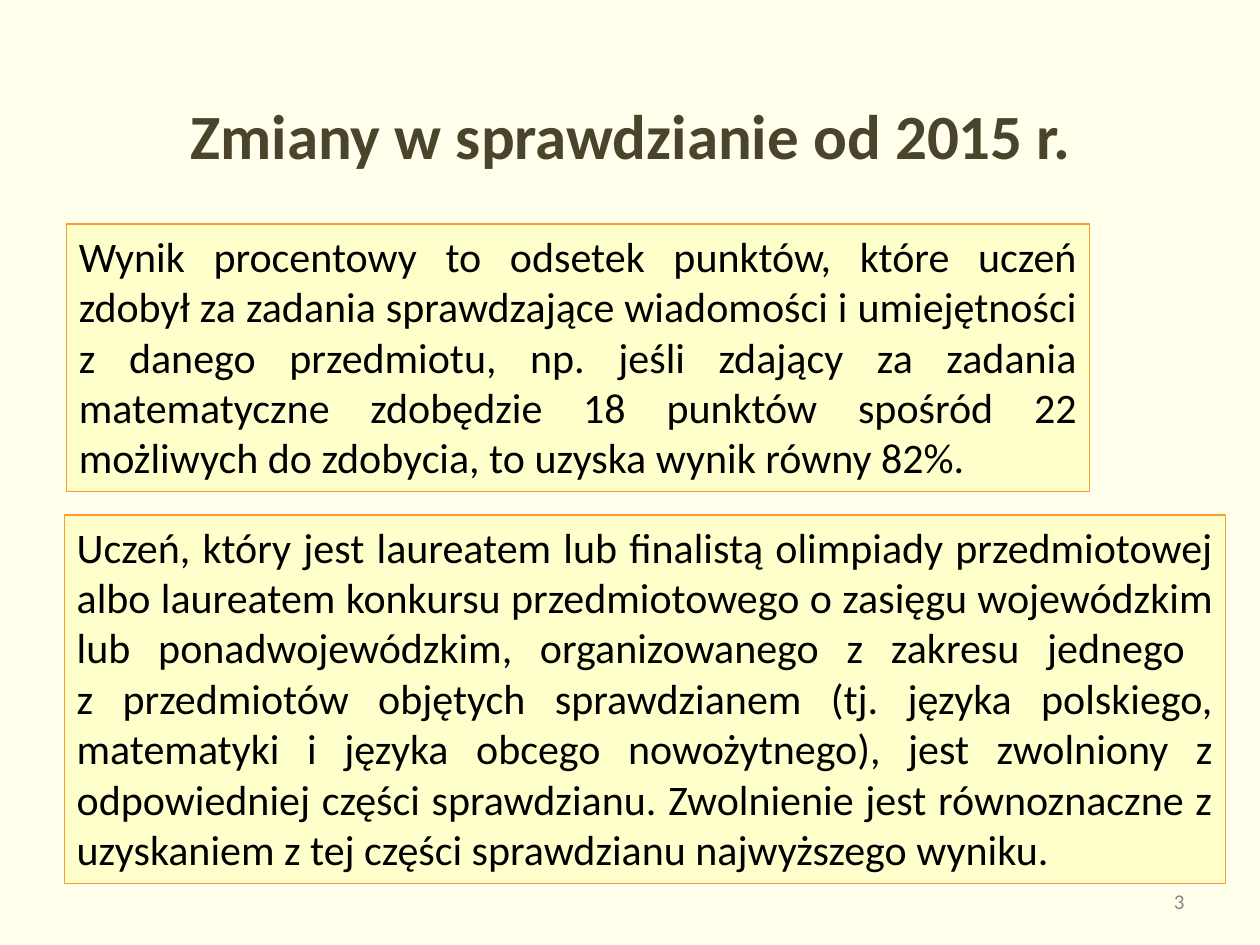
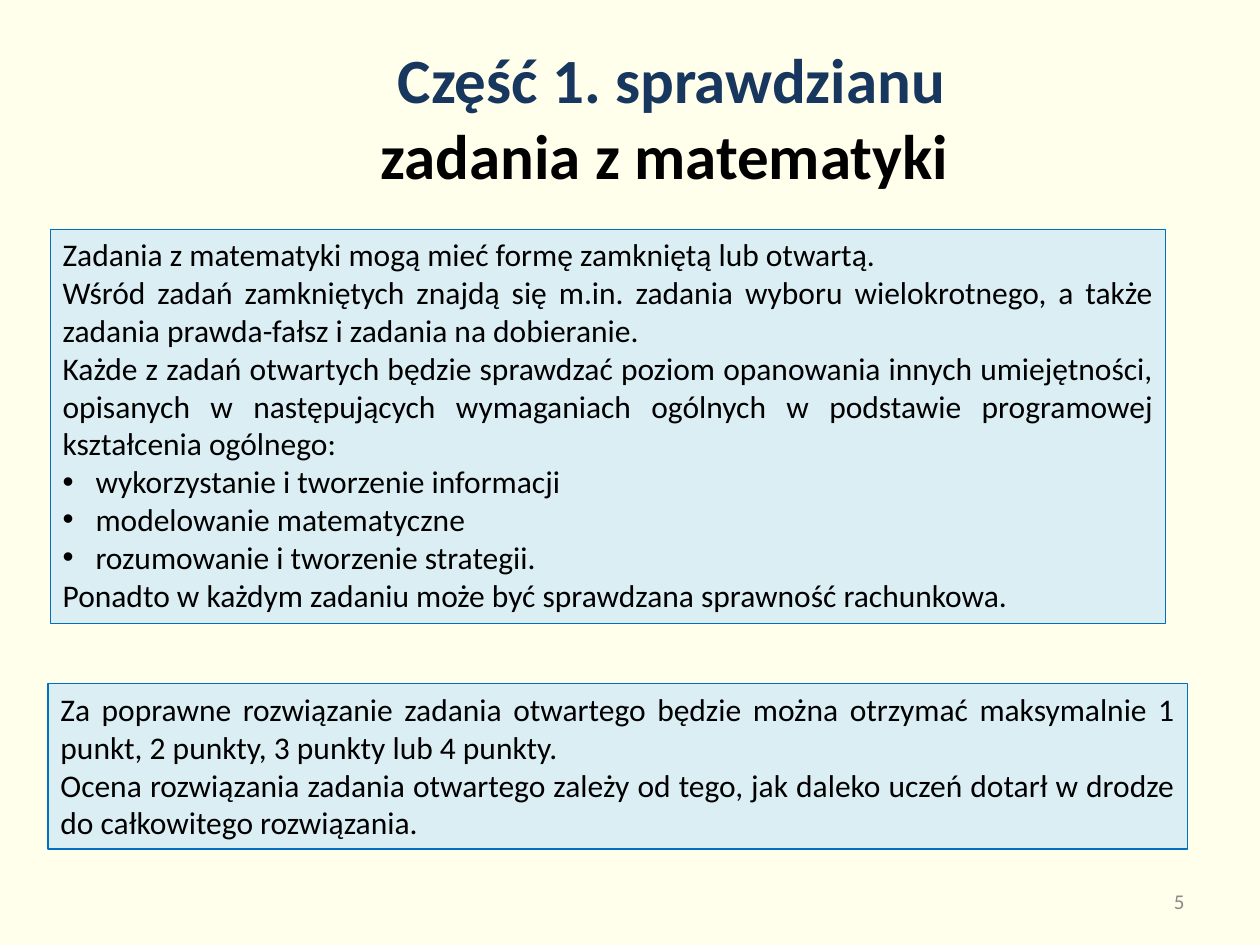
"""Build two slides about the changes to the school test."""
from lxml import etree
from pptx import Presentation
from pptx.dml.color import RGBColor
from pptx.enum.shapes import MSO_SHAPE
from pptx.enum.text import MSO_ANCHOR, MSO_AUTO_SIZE, PP_ALIGN
from pptx.oxml.ns import qn
from pptx.util import Pt

RECTANGLE = MSO_SHAPE.RECTANGLE
MIDDLE, TOP = MSO_ANCHOR.MIDDLE, MSO_ANCHOR.TOP
FIT_SHAPE = MSO_AUTO_SIZE.SHAPE_TO_FIT_TEXT
CENTER, JUSTIFY, RIGHT = PP_ALIGN.CENTER, PP_ALIGN.JUSTIFY, PP_ALIGN.RIGHT

FONT = "Calibri"
BACKGROUND, BLACK, GREY = "FFFFEB", "000000", "898989"
OLIVE, NAVY = "4A452A", "17375E"
YELLOW_BOX = ("FFFFCC", "FF9933")
BLUE_BOX = ("DBEEF4", "0070C0")
BULLET = "• "
BULLET_INDENT = 18.8

PERCENT_RESULT = [
    "Wynik procentowy to odsetek punktów, które uczeń zdobył za zadania sprawdzające "
    "wiadomości i umiejętności z danego przedmiotu, np. jeśli zdający za zadania "
    "matematyczne zdobędzie 18 punktów spośród 22 możliwych do zdobycia, to uzyska "
    "wynik równy 82%."
]
EXEMPTION = [
    "Uczeń, który jest laureatem lub finalistą olimpiady przedmiotowej albo laureatem "
    "konkursu przedmiotowego o zasięgu wojewódzkim lub ponadwojewódzkim, organizowanego "
    "z zakresu jednego \vz przedmiotów objętych sprawdzianem (tj. języka polskiego, "
    "matematyki i języka obcego nowożytnego), jest zwolniony z odpowiedniej części "
    "sprawdzianu. Zwolnienie jest równoznaczne z uzyskaniem z tej części sprawdzianu "
    "najwyższego wyniku."
]
TASK_FORMS = [
    "Zadania z matematyki mogą mieć formę zamkniętą lub otwartą.",
    "Wśród zadań zamkniętych znajdą się m.in. zadania wyboru wielokrotnego, a także "
    "zadania prawda-fałsz i zadania na dobieranie.",
    "Każde z zadań otwartych będzie sprawdzać poziom opanowania innych umiejętności, "
    "opisanych w następujących wymaganiach ogólnych w podstawie programowej "
    "kształcenia ogólnego:",
    "• wykorzystanie i tworzenie informacji",
    "• modelowanie matematyczne",
    "• rozumowanie i tworzenie strategii.",
    "Ponadto w każdym zadaniu może być sprawdzana sprawność rachunkowa.",
]
SCORING = [
    "Za poprawne rozwiązanie zadania otwartego będzie można otrzymać maksymalnie "
    "1 punkt, 2 punkty, 3 punkty lub 4 punkty.",
    "Ocena rozwiązania zadania otwartego zależy od tego, jak daleko uczeń dotarł "
    "w drodze do całkowitego rozwiązania.",
]


def color(hex_value):
    """Turn a hex string into a colour."""
    return RGBColor.from_string(hex_value)


def set_font(font, size, hex_value, bold=False):
    """Apply the shared typeface with a size, colour and weight."""
    font.name, font.size, font.bold = FONT, Pt(size), bold
    font.color.rgb = color(hex_value)


def add_bullet(paragraph):
    """Give a paragraph a round bullet with a hanging indent."""
    properties = paragraph._p.get_or_add_pPr()
    properties.set("marL", str(Pt(BULLET_INDENT)))
    properties.set("indent", str(-Pt(BULLET_INDENT)))
    etree.SubElement(properties, qn("a:buFont")).set("typeface", "Arial")
    etree.SubElement(properties, qn("a:buChar")).set("char", BULLET.strip())


def add_title(slide, lines, left, top, width):
    """Place the title and fill it with coloured lines."""
    title = slide.shapes.title
    title.left, title.top, title.width, title.height = map(Pt, (left, top, width, 90))
    title.text_frame.vertical_anchor = MIDDLE
    paragraph = title.text_frame.paragraphs[0]
    paragraph.alignment = CENTER
    for index, (text, hex_value) in enumerate(lines):
        if index:
            paragraph.add_line_break()
        run = paragraph.add_run()
        run.text = text
        set_font(run.font, 36, hex_value, bold=True)


def add_text_panel(slide, texts, bounds, colors, size):
    """Add a framed rectangle of justified paragraphs."""
    panel = slide.shapes.add_shape(RECTANGLE, *map(Pt, bounds))
    panel.shadow.inherit = False
    fill, line = colors
    panel.fill.solid()
    panel.fill.fore_color.rgb = color(fill)
    panel.line.color.rgb = color(line)
    panel.line.width = Pt(0.75)
    frame = panel.text_frame
    frame.word_wrap = True
    frame.auto_size = FIT_SHAPE
    frame.vertical_anchor = TOP
    for index, text in enumerate(texts):
        paragraph = frame.add_paragraph() if index else frame.paragraphs[0]
        paragraph.text = text.removeprefix(BULLET)
        paragraph.alignment = JUSTIFY
        if text.startswith(BULLET):
            add_bullet(paragraph)
        set_font(paragraph.font, size, BLACK)


def add_page_number(slide, number):
    """Add the page number at the bottom right."""
    box = slide.shapes.add_textbox(Pt(516), Pt(500.5), Pt(168), Pt(28.75))
    frame = box.text_frame
    frame.word_wrap = True
    frame.vertical_anchor = MIDDLE
    paragraph = frame.paragraphs[0]
    paragraph.text = str(number)
    paragraph.alignment = RIGHT
    set_font(paragraph.font, 12, GREY)


def add_page(presentation, number):
    """Add a title-only slide with the shared background and page number."""
    slide = presentation.slides.add_slide(presentation.slide_layouts[5])
    slide.background.fill.solid()
    slide.background.fill.fore_color.rgb = color(BACKGROUND)
    add_page_number(slide, number)
    return slide


def main():
    """Build and save the presentation."""
    presentation = Presentation()
    presentation.slide_width, presentation.slide_height = Pt(720), Pt(540)

    changes = add_page(presentation, 3)
    add_title(changes, [("Zmiany w sprawdzianie od 2015 r.", OLIVE)], 36.5, 31.5, 648)
    add_text_panel(changes, PERCENT_RESULT, (38, 128, 584.5, 152.75), YELLOW_BOX, 24)
    add_text_panel(changes, EXEMPTION, (36.75, 294.25, 663.5, 210.75), YELLOW_BOX, 24)

    mathematics = add_page(presentation, 5)
    title_lines = [("Część 1. sprawdzianu", NAVY), ("zadania z matematyki ", BLACK)]
    add_title(mathematics, title_lines, 88.5, 21.5, 590.5)
    add_text_panel(mathematics, TASK_FORMS, (28.75, 131, 637.5, 225.5), BLUE_BOX, 18)
    add_text_panel(mathematics, SCORING, (27.5, 390.75, 651, 94.5), BLUE_BOX, 18)

    presentation.save("out.pptx")


if __name__ == "__main__":
    main()
